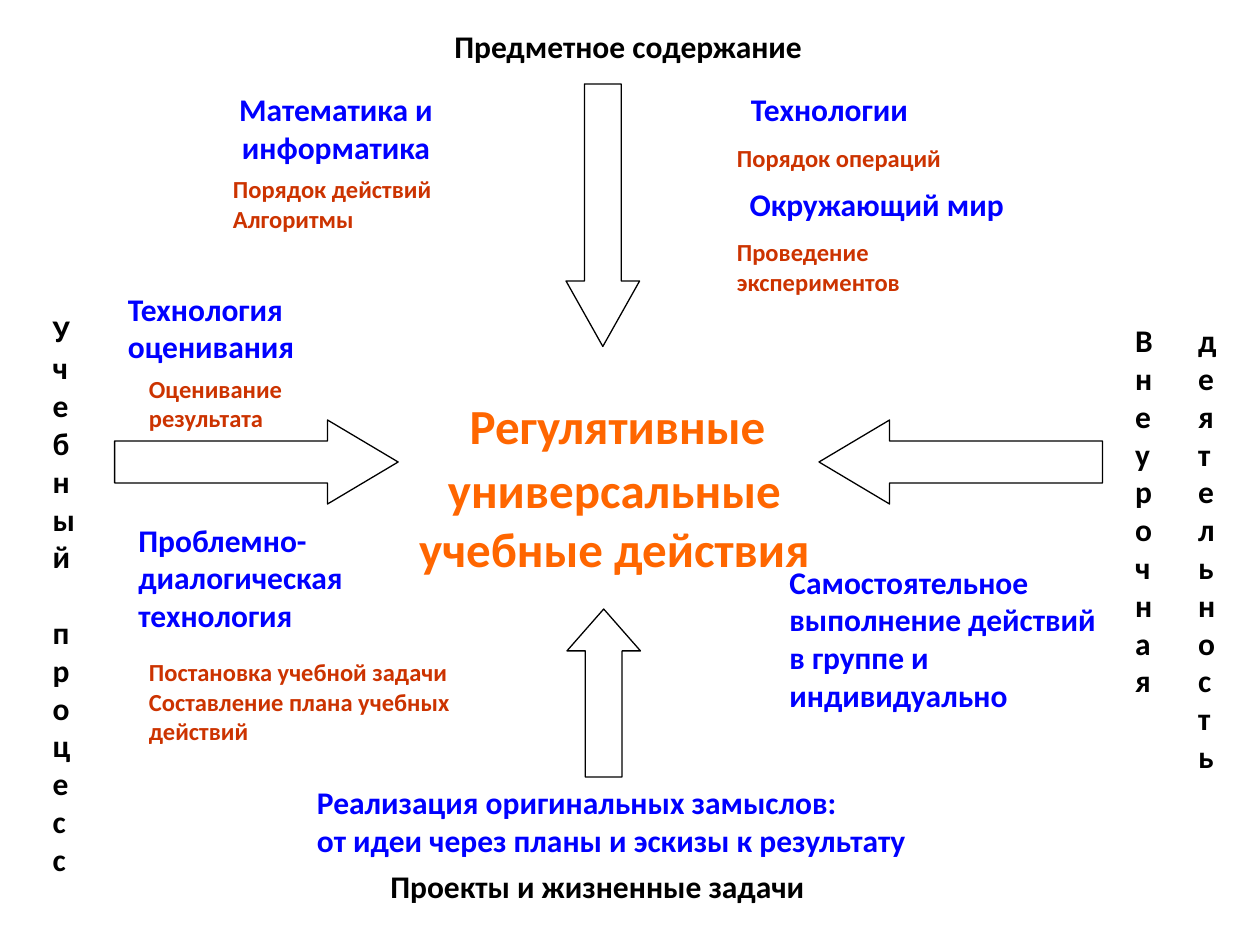
from pptx import Presentation
from pptx.dml.color import RGBColor
from pptx.enum.shapes import MSO_SHAPE
from pptx.enum.text import MSO_ANCHOR, MSO_AUTO_SIZE, PP_ALIGN
from pptx.util import Pt

BLACK = RGBColor(0x00, 0x00, 0x00)
BLUE = RGBColor(0x00, 0x00, 0xFF)
RED = RGBColor(0xCC, 0x33, 0x00)
ORANGE = RGBColor(0xFF, 0x66, 0x00)
FONT = "Calibri"
LEFT, MID = PP_ALIGN.LEFT, PP_ALIGN.CENTER

SIDES = [
    (["Предметное содержание"], (197, 12, 324, 29), MID),
    (["Учебный процесс"], (23, 174, 24, 332), LEFT),
    (["Внеурочная"], (641.5, 180, 24, 223), LEFT),
    (["Проекты и жизненные задачи"], (216, 492, 294, 29), LEFT),
    (["деятельность"], (677.5, 180, 24, 266), LEFT),
]
TOPICS = [
    (["Технология оценивания"], (66, 162, 144, 50), LEFT),
    (["Проблемно-диалогическая технология"], (72, 294, 156, 72), LEFT),
    (["Математика и информатика"], (120, 48, 144, 50), MID),
    (["Технологии"], (402, 48, 144, 29), MID),
    (["Самостоятельное выполнение действий в группе и индивидуально"],
     (444, 318, 198, 94), LEFT),
    (["Реализация оригинальных замыслов:",
      "от идеи через планы и эскизы к результату"], (174, 444, 426, 50), LEFT),
    (["Окружающий мир"], (408, 102, 186, 29), MID),
]
SKILLS = [
    (["Порядок действий", "Алгоритмы"], (126, 96, 162, 41), LEFT),
    (["Порядок операций"], (414, 78, 162, 24), LEFT),
    (["Проведение экспериментов"], (414, 132, 138, 41), LEFT),
    (["Оценивание результата"], (78, 210, 102, 41), LEFT),
    (["Постановка учебной задачи", "Составление плана учебных действий"],
     (78, 372, 216, 58), LEFT),
]
GROUPS = [(SIDES, 18, BLACK), (TOPICS, 18, BLUE), (SKILLS, 14, RED)]
ARROWS = [
    (MSO_SHAPE.RIGHT_ARROW, (65.5, 240, 162, 48), 0.84),
    (MSO_SHAPE.LEFT_ARROW, (468, 240, 162, 48), 0.84),
    (MSO_SHAPE.UP_ARROW, (324, 348, 42, 96), 0.57),
    (MSO_SHAPE.DOWN_ARROW, (323.5, 48, 42, 150), 0.89),
]
CENTER = ["Регулятивные ", "универсальные учебные действия"]


def style(font, size, color):
    font.name, font.size, font.bold = FONT, Pt(size), True
    font.color.rgb = color


def add_label(slide, lines, box, align, size, color):
    frame = slide.shapes.add_textbox(*map(Pt, box)).text_frame
    frame.word_wrap = True
    frame.text = "\n".join(lines)
    for para in frame.paragraphs:
        para.alignment = align
        style(para.font, size, color)


def add_arrow(slide, kind, box, head):
    arrow = slide.shapes.add_shape(kind, *map(Pt, box))
    arrow.adjustments[0] = 0.5
    arrow.adjustments[1] = head
    arrow.shadow.inherit = False
    arrow.fill.background()
    arrow.line.color.rgb = BLACK
    arrow.line.width = Pt(0.75)


def set_title(title):
    title.left, title.top, title.width, title.height = map(Pt, (222, 222, 258, 96))
    frame = title.text_frame
    frame.word_wrap = True
    frame.auto_size = MSO_AUTO_SIZE.NONE
    frame.vertical_anchor = MSO_ANCHOR.MIDDLE
    para = frame.paragraphs[0]
    para.alignment = MID
    lead = para.add_run()
    lead.text = " "
    style(lead.font, 44, ORANGE)
    for i, line in enumerate(CENTER):
        if i:
            para.add_line_break()
        run = para.add_run()
        run.text = line
        style(run.font, 28, ORANGE)


def main():
    deck = Presentation()
    deck.slide_width, deck.slide_height = Pt(720), Pt(540)
    slide = deck.slides.add_slide(deck.slide_layouts[5])
    set_title(slide.shapes.title)
    for arrow in ARROWS:
        add_arrow(slide, *arrow)
    for labels, size, color in GROUPS:
        for label in labels:
            add_label(slide, *label, size, color)
    deck.save("out.pptx")


if __name__ == "__main__":
    main()
